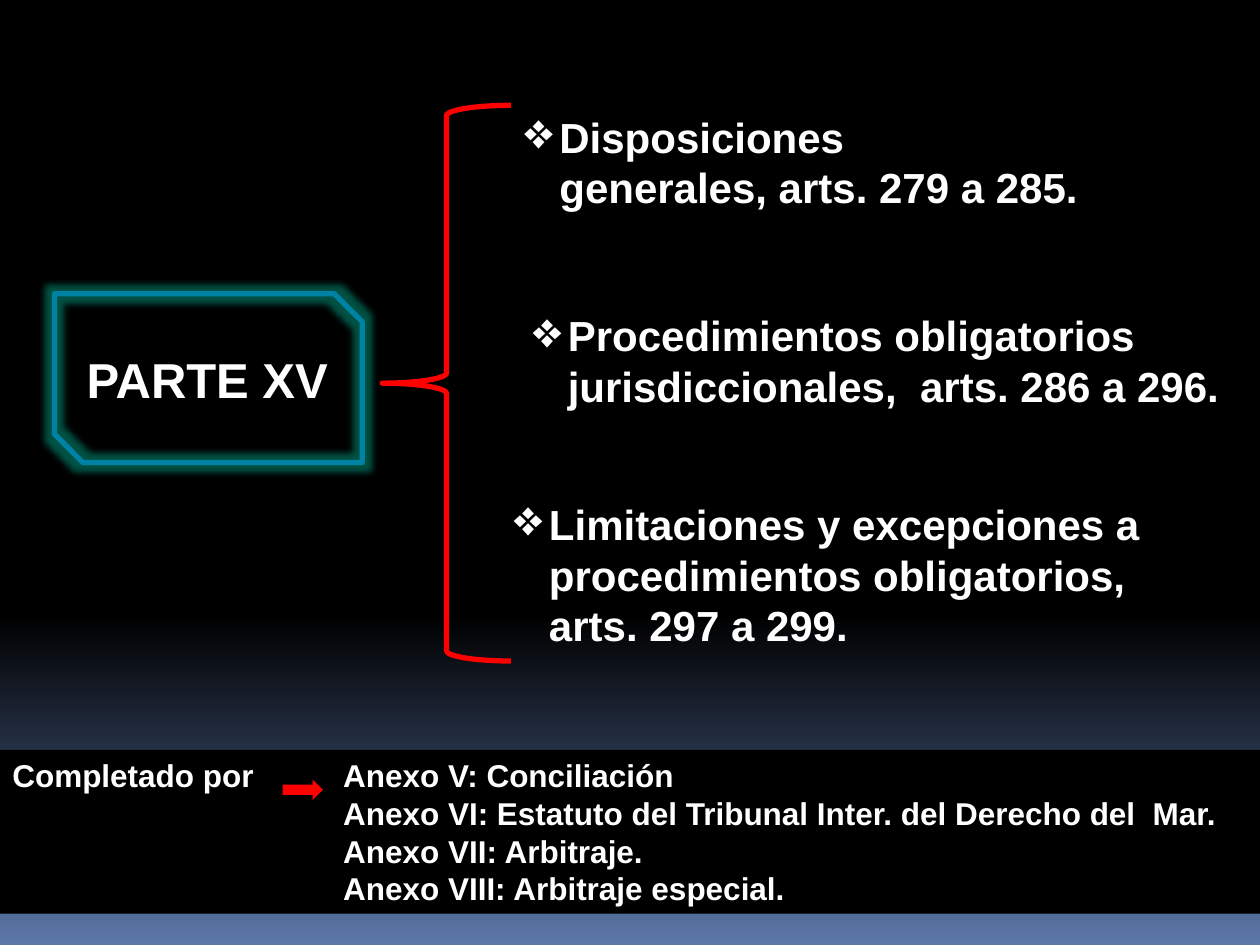
from dataclasses import dataclass

from lxml import etree
from pptx import Presentation
from pptx.dml.color import RGBColor
from pptx.enum.shapes import MSO_SHAPE as Form
from pptx.enum.text import MSO_ANCHOR as Anchor, PP_ALIGN as Align
from pptx.oxml.ns import qn
from pptx.util import Pt

WHITE, BLACK, RED, BLUE, TEAL = "FFFFFF", "000000", "FF0000", "0082A5", "00A58A"
HANG = 20     # bullet indent
COLUMN = 189  # annex indent


@dataclass
class Box:
    x: float
    y: float
    w: float
    h: float


@dataclass
class Point:
    box: Box
    lines: list[str]


POINTS = [
    Point(Box(292.6, 60.2, 363, 65.5),
          ["Disposiciones", "generales, arts. 279 a 285."]),
    Point(Box(297.4, 173.5, 422.6, 65),
          ["Procedimientos obligatorios", "jurisdiccionales,  arts. 286 a 296."]),
    Point(Box(286.6, 281.5, 408, 93.6),
          ["Limitaciones y excepciones a", "procedimientos obligatorios,",
           "arts. 297 a 299."]),
]
ANNEXES = [
    "Anexo V: Conciliación",
    "Anexo VI: Estatuto del Tribunal Inter. del Derecho del  Mar.",
    "Anexo VII: Arbitraje.",
    "Anexo VIII: Arbitraje especial.",
]


def rgb(code: str) -> RGBColor:
    return RGBColor.from_string(code)


def place(box: Box) -> list:
    return [Pt(v) for v in (box.x, box.y, box.w, box.h)]


def add_form(slide, kind, box: Box, fill: str = "", line: str = ""):
    shape = slide.shapes.add_shape(kind, *place(box))
    shape.shadow.inherit = False
    if fill:
        shape.fill.solid()
        shape.fill.fore_color.rgb = rgb(fill)
    else:
        shape.fill.background()
    if line:
        shape.line.color.rgb = rgb(line)
        shape.line.width = Pt(3)
    else:
        shape.line.fill.background()
    return shape


def write(shape, lines: list[str], size: float) -> list:
    frame = shape.text_frame
    frame.word_wrap = True
    frame.vertical_anchor = Anchor.TOP
    frame.text = "\n".join(lines)
    for para in frame.paragraphs:
        para.alignment = Align.LEFT
        para.line_spacing = Pt(size * 1.2)
        font = para.font
        font.name, font.size, font.bold = "Arial", Pt(size), True
        font.color.rgb = rgb(WHITE)
    return list(frame.paragraphs)


def add_text(slide, box: Box, lines: list[str], size: float) -> list:
    return write(slide.shapes.add_textbox(*place(box)), lines, size)


def indent(para, left: float, first: float = 0):
    props = para._p.get_or_add_pPr()
    props.set("marL", str(Pt(left)))
    props.set("indent", str(Pt(first)))
    return props


def add_point(slide, point: Point) -> None:
    head, *rest = add_text(slide, point.box, point.lines, 24)
    font = indent(head, HANG, -HANG).find(qn("a:defRPr"))
    font.addprevious(etree.Element(qn("a:buSzPct"), val="120000"))
    font.addprevious(etree.Element(qn("a:buChar"), char="❖"))
    for para in rest:
        indent(para, HANG)


def add_glow(shape, code: str, size: float) -> None:
    effects = shape._element.spPr.find(qn("a:effectLst"))
    glow = etree.SubElement(effects, qn("a:glow"), rad=str(Pt(size)))
    tint = etree.SubElement(glow, qn("a:srgbClr"), val=code)
    etree.SubElement(tint, qn("a:alpha"), val="50000")


def main() -> None:
    deck = Presentation()
    deck.slide_width, deck.slide_height = Pt(720), Pt(540)
    slide = deck.slides.add_slide(deck.slide_layouts[6])

    # Background: black, fading to blue at the foot
    back = slide.background.fill
    back.gradient()
    back.gradient_angle = 270
    for stop, (spot, code) in zip(back.gradient_stops, [(0.65, BLACK), (1, "5B77A8")]):
        stop.position = spot
        stop.color.rgb = rgb(code)

    # Title
    add_text(slide, Box(42.5, 196.5, 153.4, 41), ["PARTE XV"], 28)

    # Contents of the part
    for point in POINTS:
        add_point(slide, point)

    # Annex band and its label
    band = Box(0, 428.5, 720, 93.6)
    for para in write(add_form(slide, Form.RECTANGLE, band, fill=BLACK), ANNEXES, 18):
        indent(para, COLUMN)
    add_text(slide, Box(band.x, band.y, 160, 29), ["Completado por"], 18)

    # Brace, arrow and title frame
    brace = add_form(slide, Form.LEFT_BRACE, Box(218.4, 60.2, 73.6, 317.5), line=RED)
    brace.adjustments[0], brace.adjustments[1] = 0.08, 0.5
    add_form(slide, Form.RIGHT_ARROW, Box(161.5, 445.5, 23, 11.6), fill=RED)
    frame = add_form(slide, Form.SNIP_2_DIAG_RECTANGLE,
                     Box(31.2, 167.8, 175.8, 96.4), line=BLUE)
    add_glow(frame, TEAL, 8)

    deck.save("out.pptx")


if __name__ == "__main__":
    main()
